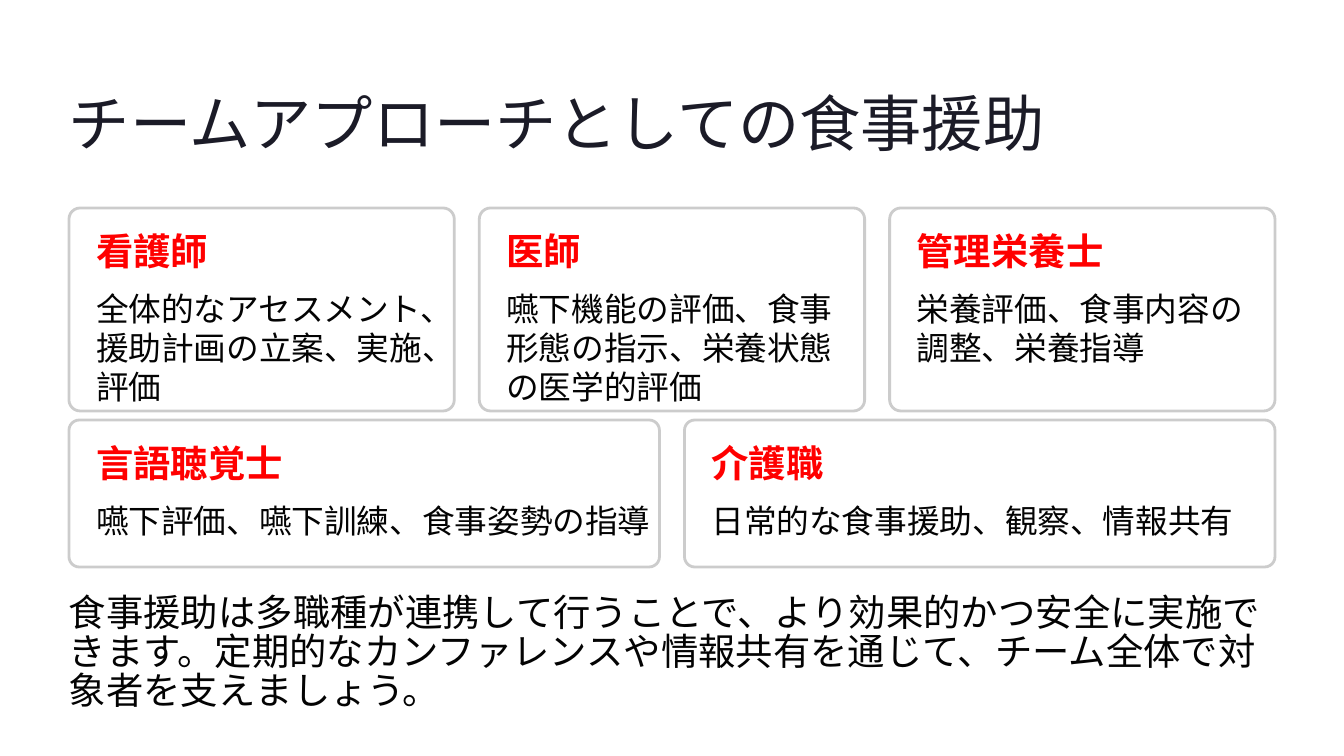
import pptx
import pptx.dml.color
import pptx.enum.shapes
import pptx.enum.text
import pptx.oxml
import pptx.oxml.ns
import pptx.util

PX = pptx.util.Inches(1) / 84
GAP = 25
PAD = 27

TOP_ROLES = [
    ("看護師", "全体的なアセスメント、援助計画の立案、実施、評価"),
    ("医師", "嚥下機能の評価、食事形態の指示、栄養状態の医学的評価"),
    ("管理栄養士", "栄養評価、食事内容の調整、栄養指導"),
]
BOTTOM_ROLES = [
    ("言語聴覚士", "嚥下評価、嚥下訓練、食事姿勢の指導"),
    ("介護職", "日常的な食事援助、観察、情報共有"),
]
SUMMARY = ("食事援助は多職種が連携して行うことで、より効果的かつ安全に実施できます。"
           "定期的なカンファレンスや情報共有を通じて、チーム全体で対象者を支えましょう。")


def emu(*lengths):
    return [round(length * PX) for length in lengths]


def rgb(value):
    return pptx.dml.color.RGBColor.from_string(value)


def set_text(sp, text, size, leading, font, color, bold=False, wrap=True):
    tf = sp.text_frame
    tf.margin_left = tf.margin_top = tf.margin_right = tf.margin_bottom = 0
    tf.auto_size = pptx.enum.text.MSO_AUTO_SIZE.NONE
    tf.vertical_anchor = pptx.enum.text.MSO_ANCHOR.TOP
    tf.word_wrap = wrap
    p = tf.paragraphs[0]
    p.text = text
    p.alignment = pptx.enum.text.PP_ALIGN.LEFT
    p.line_spacing = pptx.util.Pt(leading)
    p.space_before = pptx.util.Pt(0)
    p.font.name = font
    p.font.size = pptx.util.Pt(size)
    p.font.bold = bold
    p.font.color.rgb = rgb(color)
    return p


def place(sp, x, y, w, h):
    sp.left, sp.top, sp.width, sp.height = emu(x, y, w, h)


def add_title(s, x, y, w, h):
    place(s.shapes.title, x, y, w, h)
    set_text(s.shapes.title, "チームアプローチとしての食事援助",
             52.5, 65.5, "Inter", "1B1B27", wrap=False)


def add_card(s, x, y, w, h, radius, role, duty, wrap):
    # Frame
    sp = s.shapes.add_shape(pptx.enum.shapes.MSO_SHAPE.ROUNDED_RECTANGLE,
                            *emu(x, y, w, h))
    sp.adjustments[0] = radius
    sp.shadow.inherit = False
    sp.fill.solid()
    sp.fill.fore_color.rgb = rgb("FFFFFF")
    fill = sp.fill._xPr.find(".//" + pptx.oxml.ns.qn("a:srgbClr"))
    fill.append(pptx.oxml.parse_xml(
        f'<a:alpha {pptx.oxml.ns.nsdecls("a")} val="95000"/>'))
    sp.line.color.rgb = rgb("CCCCCC")
    sp.line.width = pptx.util.Pt(2.4)

    # Role and duty
    inner = w - 2 * PAD
    heading = s.shapes.add_textbox(*emu(x + PAD, y + PAD, inner, 39))
    set_text(heading, role, 32, 32.5, "Inter", "FF0000", bold=True, wrap=False)
    body = s.shapes.add_textbox(*emu(x + PAD, y + 81, inner, 79 if wrap else 39))
    set_text(body, duty, 28, 33.5, "Roboto", "030303", wrap=wrap)


def add_card_row(s, x, y, w, h, radius, roles, wrap):
    card_w = (w - GAP * (len(roles) - 1)) / len(roles)
    for i, (role, duty) in enumerate(roles):
        add_card(s, x + i * (card_w + GAP), y, card_w, h, radius, role, duty, wrap)


def add_summary(s, x, y, w, h):
    sp = s.placeholders[1]
    place(sp, x, y, w, h)
    p = set_text(sp, SUMMARY, 32, 33.5, "Roboto", "030303")
    # No bullet or hanging indent
    pPr = p._p.get_or_add_pPr()
    pPr.set("marL", "0")
    pPr.set("indent", "0")
    bullet = pptx.oxml.parse_xml(f'<a:buNone {pptx.oxml.ns.nsdecls("a")}/>')
    pPr.find(pptx.oxml.ns.qn("a:defRPr")).addprevious(bullet)


def main():
    prs = pptx.Presentation()
    prs.slide_width, prs.slide_height = emu(1344, 756)
    s = prs.slides.add_slide(prs.slide_layouts[1])
    add_title(s, 69, 82, 980, 76)
    add_card_row(s, 69, 208, 1206, 203, 0.055, TOP_ROLES, wrap=True)
    add_card_row(s, 69, 420, 1206, 147, 0.07, BOTTOM_ROLES, wrap=False)
    add_summary(s, 69, 595, 1206, 79)
    prs.save("out.pptx")


if __name__ == "__main__":
    main()
